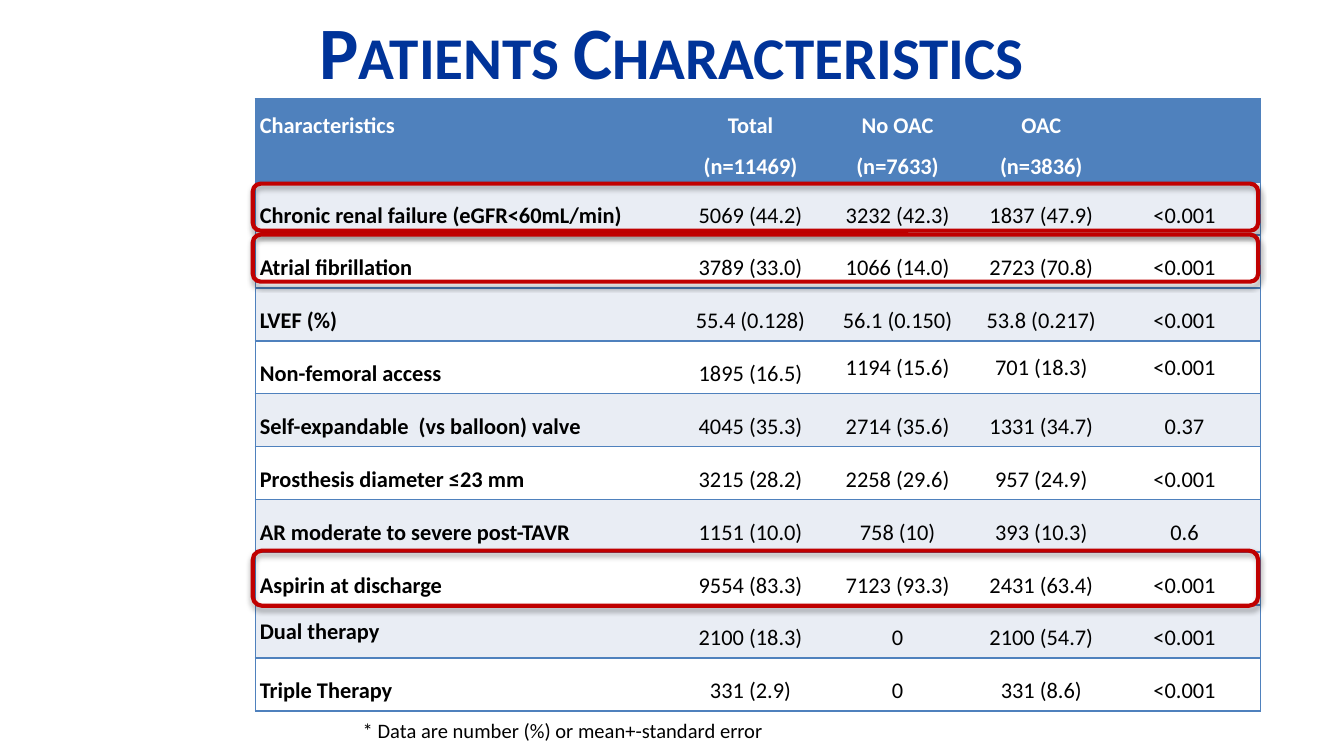
from dataclasses import dataclass
from typing import NamedTuple

from lxml.etree import SubElement
from pptx import Presentation
from pptx.dml.color import RGBColor
from pptx.enum.shapes import MSO_SHAPE
from pptx.enum.text import MSO_ANCHOR, PP_ALIGN
from pptx.oxml.ns import qn
from pptx.util import Pt


@dataclass(frozen=True)
class Theme:
    font: str = "Calibri"
    title: str = "003399"
    header: str = "4F81BD"
    band: str = "E9EDF4"
    white: str = "FFFFFF"
    ink: str = "000000"
    highlight: str = "C00000"
    title_size: float = 39.6
    table_size: float = 12
    note_size: float = 11


class Box(NamedTuple):
    left: float
    top: float
    width: float
    height: float

    def lengths(self):
        return [Pt(value) for value in self]


THEME = Theme()
COLUMN_WIDTHS = [227.5, 75.6, 82, 72, 81.5]
HEADER_HEIGHT = 44.6
HEADINGS = [
    ["Characteristics"],
    ["Total", "(n=11469)"],
    ["No OAC", "(n=7633)"],
    ["OAC", "(n=3836)"],
    [],
]
PATIENT_ROWS = [
    ["Chronic renal failure (eGFR<60mL/min)", "5069 (44.2)", "3232 (42.3)", "1837 (47.9)", "<0.001"],
    ["Atrial fibrillation", "3789 (33.0)", "1066 (14.0)", "2723 (70.8)", "<0.001"],
    ["LVEF (%)", "55.4 (0.128)", "56.1 (0.150)", "53.8 (0.217)", "<0.001"],
    ["Non-femoral access", "1895 (16.5)", "1194 (15.6)", "701 (18.3)", "<0.001"],
    ["Self-expandable  (vs balloon) valve", "4045 (35.3)", "2714 (35.6)", "1331 (34.7)", "0.37"],
    ["Prosthesis diameter ≤23 mm", "3215 (28.2)", "2258 (29.6)", "957 (24.9)", "<0.001"],
    ["AR moderate to severe post-TAVR", "1151 (10.0)", "758 (10)", "393 (10.3)", "0.6"],
    ["Aspirin at discharge", "9554 (83.3)", "7123 (93.3)", "2431 (63.4)", "<0.001"],
    ["Dual therapy", "2100 (18.3)", "0", "2100 (54.7)", "<0.001"],
    ["Triple Therapy", "331 (2.9)", "0", "331 (8.6)", "<0.001"],
]
HIGHLIGHTS = [(45.4, 25.2), (72.7, 25.2), (242, 29.5)]


def add_run(paragraph, text, size, color, bold=False):
    run = paragraph.add_run()
    run.text = text
    run.font.name = THEME.font
    run.font.size = Pt(size)
    run.font.bold = bold
    run.font.color.rgb = RGBColor.from_string(color)
    return run


def add_text_box(slide, box, anchor):
    frame = slide.shapes.add_textbox(*box.lengths()).text_frame
    frame.word_wrap = True
    frame.vertical_anchor = anchor
    return frame.paragraphs[0]


def add_title(slide, box):
    paragraph = add_text_box(slide, box, MSO_ANCHOR.MIDDLE)
    paragraph.alignment = PP_ALIGN.CENTER
    title = add_run(paragraph, "Patients Characteristics", THEME.title_size, THEME.title, True)
    title.font._element.set("cap", "small")


def add_footnote(slide, box):
    paragraph = add_text_box(slide, box, MSO_ANCHOR.TOP)
    add_run(paragraph, "* Data are number (%) or mean+-standard error", THEME.note_size, THEME.ink)


def set_borders(cell, lined_sides):
    properties = cell._tc.get_or_add_tcPr()
    for position, side in enumerate("LRTB"):
        border = SubElement(properties, qn(f"a:ln{side}"), w=str(Pt(1)))
        if side in lined_sides:
            fill = SubElement(border, qn("a:solidFill"))
            SubElement(fill, qn("a:srgbClr"), val=THEME.header)
        else:
            SubElement(border, qn("a:noFill"))
        properties.insert(position, border)


def fill_cell(cell, lines, fill, color, bold, centred, anchor, inset, spacing):
    cell.fill.solid()
    cell.fill.fore_color.rgb = RGBColor.from_string(fill)
    cell.margin_left = cell.margin_right = Pt(inset)
    cell.margin_top = cell.margin_bottom = 0
    cell.vertical_anchor = anchor
    frame = cell.text_frame
    frame.paragraphs[0].font.size = Pt(THEME.table_size)
    for index, line in enumerate(lines):
        paragraph = frame.add_paragraph() if index else frame.paragraphs[0]
        paragraph.alignment = PP_ALIGN.CENTER if centred else PP_ALIGN.LEFT
        paragraph.line_spacing = spacing
        add_run(paragraph, line, THEME.table_size, color, bold)


def add_patient_table(slide, box):
    row_count, column_count = len(PATIENT_ROWS) + 1, len(COLUMN_WIDTHS)
    table = slide.shapes.add_table(row_count, column_count, *box.lengths()).table
    table.horz_banding = False
    for column, width in zip(table.columns, COLUMN_WIDTHS):
        column.width = Pt(width)
    row_height = (box.height - HEADER_HEIGHT) / len(PATIENT_ROWS)
    for index, row in enumerate(table.rows):
        row.height = Pt(row_height if index else HEADER_HEIGHT)

    for column, lines in enumerate(HEADINGS):
        fill_cell(table.cell(0, column), lines, THEME.header, THEME.white, True,
                  column > 0, MSO_ANCHOR.TOP, 2.4, 1.5)
    for row, values in enumerate(PATIENT_ROWS, start=1):
        fill = THEME.band if row % 2 else THEME.white
        for column, value in enumerate(values):
            raised = values[0] == "Non-femoral access" and column > 1
            anchor = MSO_ANCHOR.TOP if raised else MSO_ANCHOR.MIDDLE
            inset = 5 if column and values[0].lower().endswith("therapy") else 2.4
            spacing = 1 if value == "Dual therapy" else 1.5
            fill_cell(table.cell(row, column), [value], fill, THEME.ink, column == 0,
                      column > 0, anchor, inset, spacing)

    for row in range(row_count):
        for column in range(column_count):
            outer_side = {0: "L", column_count - 1: "R"}.get(column, "")
            set_borders(table.cell(row, column), "TB" + outer_side)


def add_highlight(slide, box):
    frame = slide.shapes.add_shape(MSO_SHAPE.ROUNDED_RECTANGLE, *box.lengths())
    frame.fill.background()
    frame.line.color.rgb = RGBColor.from_string(THEME.highlight)
    frame.line.width = Pt(2.25)
    frame.shadow.inherit = False
    effects = frame._element.spPr.find(qn("a:effectLst"))
    shadow = SubElement(effects, qn("a:outerShdw"), blurRad=str(Pt(3.1)),
                        dist=str(Pt(1.8)), dir="5400000", rotWithShape="0")
    color = SubElement(shadow, qn("a:srgbClr"), val=THEME.ink)
    SubElement(color, qn("a:alpha"), val="35000")


def add_highlights(slide, box):
    for offset, height in HIGHLIGHTS:
        add_highlight(slide, Box(box.left - 1.4, box.top + offset, box.width, height))


def main():
    presentation = Presentation()
    presentation.slide_width = Pt(720)
    presentation.slide_height = Pt(405)
    slide = presentation.slides.add_slide(presentation.slide_layouts[6])
    table_box = Box(136.8, 53, sum(COLUMN_WIDTHS), 328)
    add_patient_table(slide, table_box)
    add_highlights(slide, table_box)
    add_title(slide, Box(36, -2.2, 648, 57.6))
    add_footnote(slide, Box(187.2, 380.9, 306, 20.9))
    presentation.save("out.pptx")


if __name__ == "__main__":
    main()
